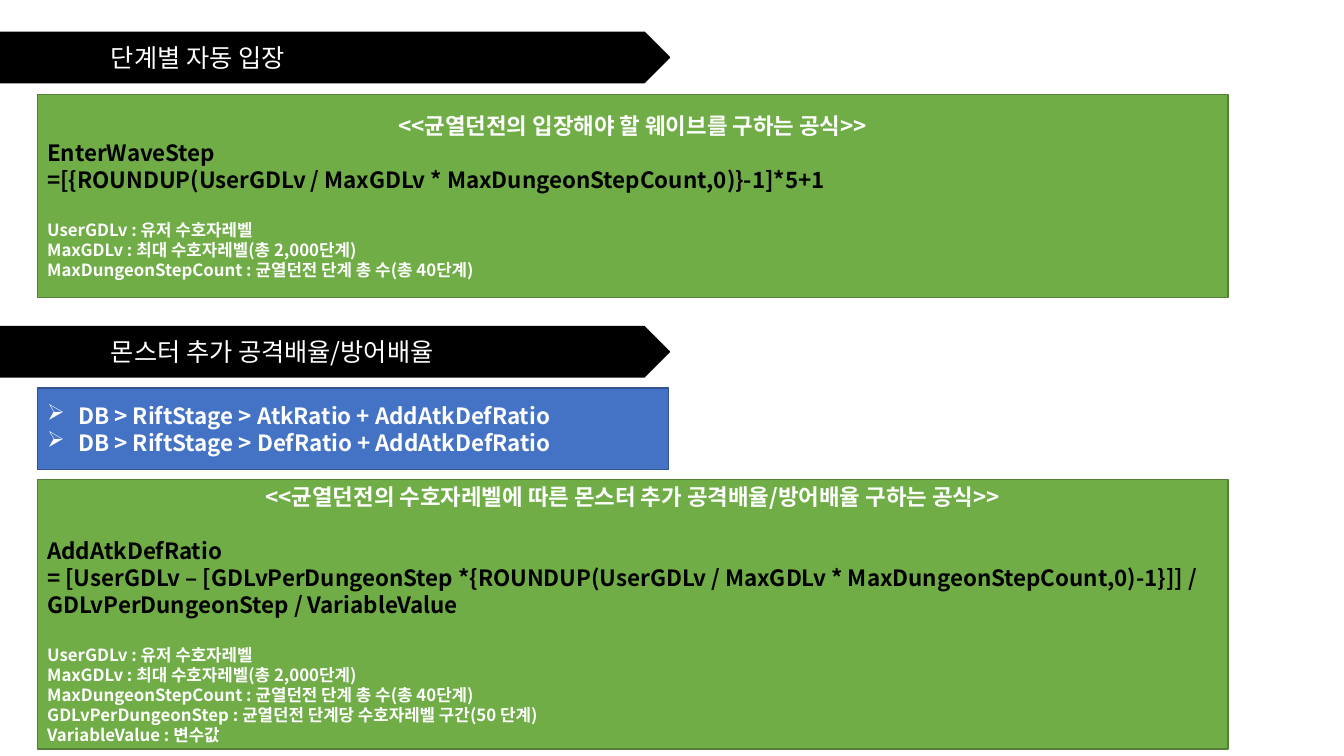
"""Build the rift dungeon formula slide."""
import dataclasses

import lxml.etree
import pptx
import pptx.dml.color
import pptx.enum.shapes
import pptx.enum.text
import pptx.oxml.ns
import pptx.shapes.autoshape
import pptx.slide
import pptx.text.text
import pptx.util

FONT = "Noto Sans CJK KR"
COLORS = {
    "black": "000000",
    "white": "FFFFFF",
    "green": "70AD47",
    "green_edge": "538035",
    "blue": "4472C4",
    "blue_edge": "325491",
}
ALIGN = pptx.enum.text.PP_ALIGN
SHAPE = pptx.enum.shapes.MSO_SHAPE
LINE_GAP = 19
BULLET_INDENT = pptx.util.Inches(0.31)


@dataclasses.dataclass(frozen=True)
class Line:
    text: str
    size: int = 16
    color: str = "white"
    bold: bool = True
    centered: bool = False
    gap: int = 0
    bullet: str = ""


@dataclasses.dataclass(frozen=True)
class Panel:
    left: float
    top: float
    width: float
    height: float
    fill: str
    edge: str
    lines: list[Line]
    shape: SHAPE = SHAPE.RECTANGLE
    inset: float = 0.1


def banner(top: float, title: str) -> Panel:
    line = Line(title, size=18, bold=False)
    return Panel(0, top, 6.64, 0.5, "black", "black", [line], SHAPE.PENTAGON, 1.1)


def formula_panel(top: float, height: float, title: str, title_gap: int,
                  formula: list[str], terms: list[str]) -> Panel:
    lines = [Line(title, centered=True)]
    lines += [Line(text, color="black", gap=0 if index else title_gap)
              for index, text in enumerate(formula)]
    lines += [Line(text, size=12, gap=0 if index else LINE_GAP)
              for index, text in enumerate(terms)]
    return Panel(0.37, top, 11.81, height, "green", "green_edge", lines)


COMMON_TERMS = [
    "UserGDLv : 유저 수호자레벨",
    "MaxGDLv : 최대 수호자레벨(총 2,000단계)",
    "MaxDungeonStepCount : 균열던전 단계 총 수(총 40단계)",
]
RATIO_TERMS = [
    "GDLvPerDungeonStep : 균열던전 단계당 수호자레벨 구간(50 단계)",
    "VariableValue : 변수값",
]
PANELS = [
    banner(0.32, "단계별 자동 입장"),
    banner(3.24, "몬스터 추가 공격배율/방어배율"),
    formula_panel(
        0.94, 2.01, "<<균열던전의 입장해야 할 웨이브를 구하는 공식>>", 0,
        ["EnterWaveStep",
         "=[{ROUNDUP(UserGDLv / MaxGDLv * MaxDungeonStepCount,0)}-1]*5+1"],
        COMMON_TERMS),
    formula_panel(
        4.76, 2.67,
        "<<균열던전의 수호자레벨에 따른 몬스터 추가 공격배율/방어배율 구하는 공식>>",
        LINE_GAP,
        ["AddAtkDefRatio",
         "= [UserGDLv – [GDLvPerDungeonStep *{ROUNDUP(UserGDLv / MaxGDLv * "
         "MaxDungeonStepCount,0)-1}]] / GDLvPerDungeonStep / VariableValue"],
        COMMON_TERMS + RATIO_TERMS),
    Panel(0.37, 3.85, 6.26, 0.81, "blue", "blue_edge",
          [Line(f"DB > RiftStage > {ratio} + AddAtkDefRatio", bullet="➢")
           for ratio in ("AtkRatio", "DefRatio")]),
]


def rgb(name: str) -> pptx.dml.color.RGBColor:
    return pptx.dml.color.RGBColor.from_string(COLORS[name])


def write_line(para: pptx.text.text._Paragraph, line: Line) -> None:
    qn = pptx.oxml.ns.qn
    para.text = line.text
    para.alignment = ALIGN.CENTER if line.centered else ALIGN.LEFT
    if line.gap:
        para.space_before = pptx.util.Pt(line.gap)
    properties = para._p.get_or_add_pPr()
    if line.bullet:
        properties.set("marL", str(BULLET_INDENT))
        properties.set("indent", str(-BULLET_INDENT))
        bullet = lxml.etree.SubElement(properties, qn("a:buChar"))
        bullet.set("char", line.bullet)
    font = para.font
    font.name = FONT
    font.size = pptx.util.Pt(line.size)
    font.bold = line.bold
    font.color.rgb = rgb(line.color)
    east_asian = lxml.etree.SubElement(properties.find(qn("a:defRPr")), qn("a:ea"))
    east_asian.set("typeface", FONT)


def draw_panel(page: pptx.slide.Slide, panel: Panel) -> pptx.shapes.autoshape.Shape:
    bounds = (panel.left, panel.top, panel.width, panel.height)
    box = page.shapes.add_shape(panel.shape, *map(pptx.util.Inches, bounds))
    box.shadow.inherit = False
    box.fill.solid()
    box.fill.fore_color.rgb = rgb(panel.fill)
    box.line.color.rgb = rgb(panel.edge)
    box.line.width = pptx.util.Pt(1)
    frame = box.text_frame
    frame.word_wrap = True
    frame.vertical_anchor = pptx.enum.text.MSO_ANCHOR.MIDDLE
    frame.margin_left = pptx.util.Inches(panel.inset)
    for index, line in enumerate(panel.lines):
        para = frame.add_paragraph() if index else frame.paragraphs[0]
        write_line(para, line)
    return box


def main() -> None:
    deck = pptx.Presentation()
    deck.slide_width = pptx.util.Inches(13.33)
    deck.slide_height = pptx.util.Inches(7.5)
    page = deck.slides.add_slide(deck.slide_layouts[6])
    for panel in PANELS:
        draw_panel(page, panel)
    deck.save("out.pptx")


if __name__ == "__main__":
    main()
